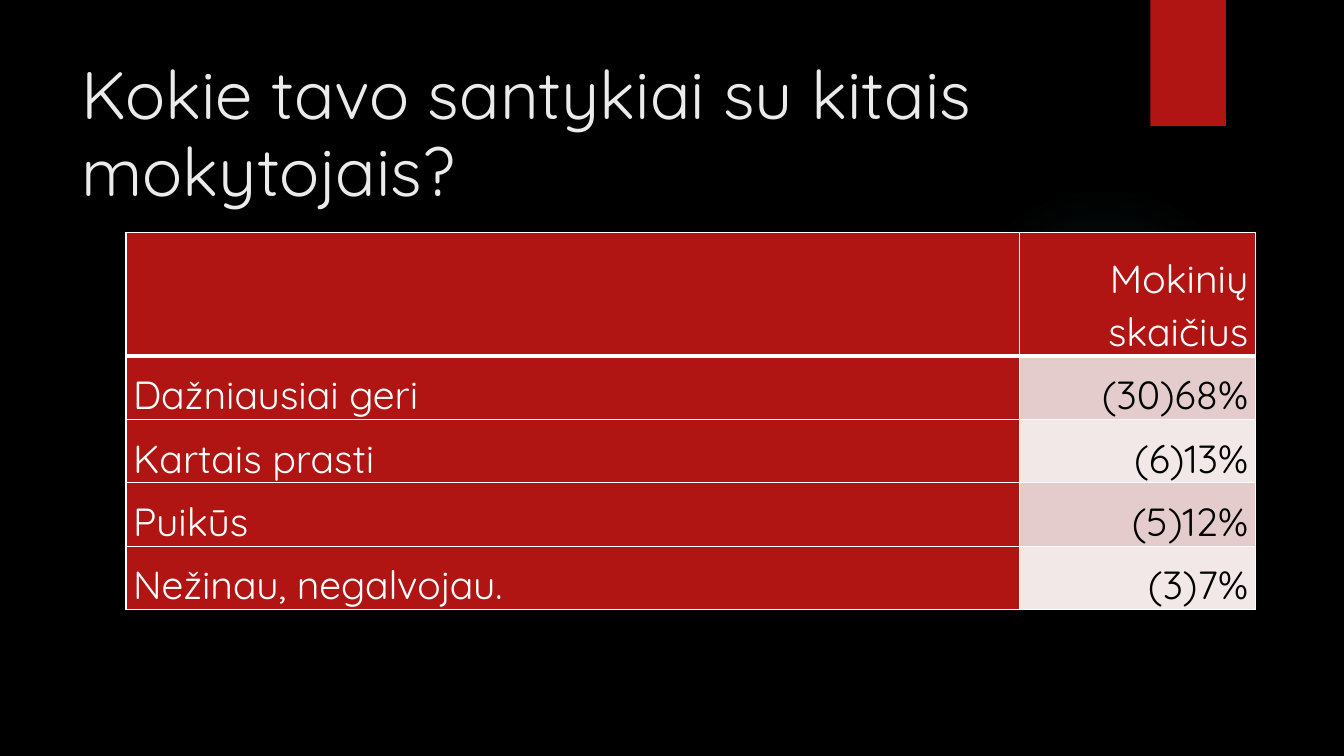
from dataclasses import dataclass

from lxml.etree import SubElement
from pptx import Presentation
from pptx.dml.color import RGBColor
from pptx.enum.shapes import MSO_SHAPE
from pptx.enum.text import MSO_ANCHOR, MSO_AUTO_SIZE, PP_ALIGN
from pptx.oxml import parse_xml
from pptx.oxml.ns import nsdecls, qn
from pptx.util import Inches, Pt


@dataclass(frozen=True)
class Theme:
    """Colours, font and type sizes of the slide."""
    font: str = "Quicksand"
    background: str = "000000"
    accent: str = "B01513"
    glow: str = "50B9C1"
    title: str = "EBEBEB"
    light: str = "FFFFFF"
    dark: str = "000000"
    bands: tuple = ("E4CCCC", "F2E8E7")
    title_size: int = 48
    table_size: int = 28


THEME = Theme()
HEADER = ("", "Mokinių skaičius")
ANSWERS = (
    ("Dažniausiai geri", "(30)68%"),
    ("Kartais prasti", "(6)13%"),
    ("Puikūs", "(5)12%"),
    ("Nežinau, negalvojau.", "(3)7%"),
)
COLUMN_WIDTHS = (8.86, 2.34)
ROW_HEIGHTS = (1.22,) + (0.63,) * len(ANSWERS)
GLOW_STOPS = ((0, 7), (36, 6), (69, 0))


def apply_format(target, values):
    """Set each named attribute on the target."""
    for name, value in values.items():
        setattr(target, name, value)


def fill_solid(fill, colour):
    """Give a fill one solid colour."""
    fill.solid()
    fill.fore_color.rgb = RGBColor.from_string(colour)


def style_font(font, size, colour):
    """Format a font in the theme typeface."""
    apply_format(font, {"name": THEME.font, "size": Pt(size), "bold": False})
    font.color.rgb = RGBColor.from_string(colour)


def add_plain_shape(slide, kind, left, top, width, height):
    """Add an accent-coloured shape without outline or shadow."""
    shape = slide.shapes.add_shape(
        kind, Inches(left), Inches(top), Inches(width), Inches(height))
    shape.shadow.inherit = False
    shape.line.fill.background()
    fill_solid(shape.fill, THEME.accent)
    return shape


def add_glow(slide):
    """Add the faint round glow at the upper right."""
    shape = add_plain_shape(slide, MSO_SHAPE.OVAL, 9.41, 1.83, 3.08, 3.08)
    stops = "".join(
        f'<a:gs pos="{position * 1000}"><a:srgbClr val="{THEME.glow}">'
        f'<a:alpha val="{alpha * 1000}"/></a:srgbClr></a:gs>'
        for position, alpha in GLOW_STOPS)
    gradient = parse_xml(
        f'<a:gradFill {nsdecls("a")} rotWithShape="1"><a:gsLst>{stops}</a:gsLst>'
        '<a:path path="circle"><a:fillToRect l="50000" t="50000" r="50000" b="50000"/>'
        '</a:path></a:gradFill>')
    properties = shape.element.spPr
    properties.replace(properties.find(qn("a:solidFill")), gradient)


def add_title(slide, text):
    """Place and format the slide title."""
    title = slide.shapes.title
    apply_format(title, {"left": Inches(0.71), "top": Inches(0.5),
                         "width": Inches(10.29), "height": Inches(1.53)})
    apply_format(title.text_frame, {
        "text": text, "word_wrap": True, "auto_size": MSO_AUTO_SIZE.NONE,
        "vertical_anchor": MSO_ANCHOR.TOP, "margin_top": Inches(0.08)})
    paragraph = title.text_frame.paragraphs[0]
    apply_format(paragraph, {"alignment": PP_ALIGN.LEFT, "line_spacing": 0.95})
    style_font(paragraph.font, THEME.title_size, THEME.title)


def add_borders(cell, bottom_width):
    """Draw white borders around a cell."""
    properties = cell._tc.get_or_add_tcPr()
    widths = {"lnL": 1, "lnR": 1, "lnT": 1, "lnB": bottom_width}
    for index, (side, width) in enumerate(widths.items()):
        line = SubElement(properties, qn(f"a:{side}"), w=str(Pt(width)))
        fill = SubElement(line, qn("a:solidFill"))
        SubElement(fill, qn("a:srgbClr"), val=THEME.light)
        properties.insert(index, line)


def format_cell(cell, text, fill, colour, alignment, bottom_width):
    """Write and format one table cell."""
    apply_format(cell, {
        "text": text, "vertical_anchor": MSO_ANCHOR.BOTTOM,
        "margin_left": Inches(0.07), "margin_right": Inches(0.07),
        "margin_top": 0, "margin_bottom": 0})
    paragraph = cell.text_frame.paragraphs[0]
    apply_format(paragraph, {"alignment": alignment, "line_spacing": 1.07,
                             "space_after": Pt(8)})
    style_font(paragraph.font, THEME.table_size, colour)
    fill_solid(cell.fill, fill)
    add_borders(cell, bottom_width)


def add_answer_table(slide):
    """Add the table of answers and pupil counts."""
    rows = (HEADER,) + ANSWERS
    table = slide.shapes.add_table(
        len(rows), len(HEADER), Inches(1.25), Inches(2.31),
        Inches(sum(COLUMN_WIDTHS)), Inches(sum(ROW_HEIGHTS))).table
    for column, width in zip(table.columns, COLUMN_WIDTHS):
        column.width = Inches(width)
    for row, height in zip(table.rows, ROW_HEIGHTS):
        row.height = Inches(height)
    for row_index, texts in enumerate(rows):
        for column_index, text in enumerate(texts):
            is_value = row_index > 0 and column_index > 0
            format_cell(
                table.cell(row_index, column_index), text,
                THEME.bands[(row_index - 1) % 2] if is_value else THEME.accent,
                THEME.dark if is_value else THEME.light,
                PP_ALIGN.RIGHT if column_index else PP_ALIGN.LEFT,
                1 if row_index else 3)


def main():
    """Build and save the presentation."""
    presentation = Presentation()
    apply_format(presentation, {"slide_width": Inches(13.33),
                                "slide_height": Inches(7.5)})
    slide = presentation.slides.add_slide(presentation.slide_layouts[5])
    fill_solid(slide.background.fill, THEME.background)
    add_glow(slide)
    add_plain_shape(slide, MSO_SHAPE.RECTANGLE, 11.41, 0, 0.75, 1.25)
    add_title(slide, "Kokie tavo santykiai su kitais mokytojais?")
    add_answer_table(slide)
    presentation.save("out.pptx")


if __name__ == "__main__":
    main()
